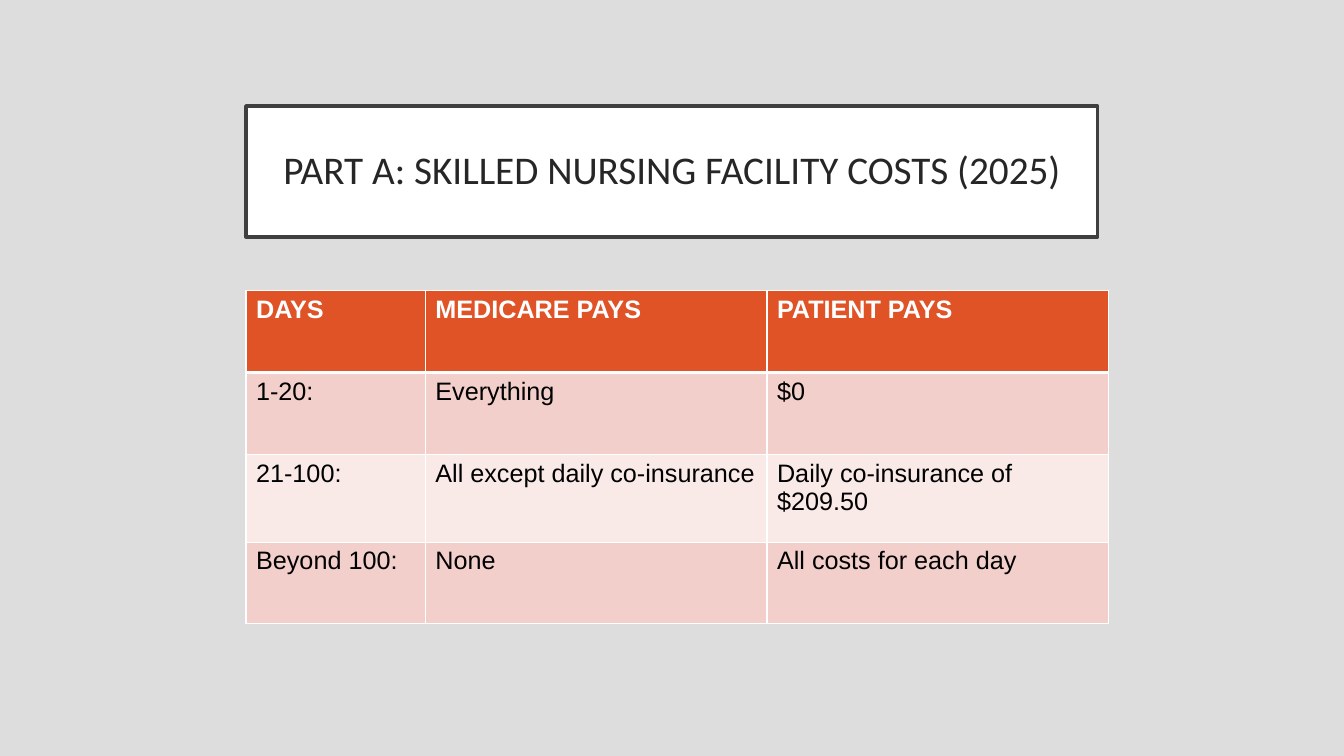
from lxml.etree import SubElement
from pptx import Presentation
from pptx.dml.color import RGBColor
from pptx.enum.text import MSO_ANCHOR, MSO_AUTO_SIZE, PP_ALIGN
from pptx.oxml.ns import qn
from pptx.util import Cm, Pt

TITLE = "PART A: SKILLED NURSING FACILITY COSTS (2025)"
COSTS = [
    ("DAYS", "MEDICARE PAYS", "PATIENT PAYS"),
    ("1-20:", "Everything", "$0"),
    ("21-100:", "All except daily co-insurance", "Daily co-insurance of $209.50"),
    ("Beyond 100:", "None", "All costs for each day"),
]
COLUMN_WIDTHS = [4.52, 8.61, 8.61]
ROW_HEIGHTS = [2.06, 2.06, 2.21, 2.06]
LEFT = 6.2

WHITE = RGBColor(0xFF, 0xFF, 0xFF)
BLACK = RGBColor(0x00, 0x00, 0x00)
GREY = RGBColor(0xDD, 0xDD, 0xDD)
FRAME = RGBColor(0x3F, 0x3F, 0x3F)
TITLE_INK = RGBColor(0x26, 0x26, 0x26)
ORANGE = RGBColor(0xDF, 0x53, 0x27)
BANDS = [RGBColor(0xF9, 0xE9, 0xE7), RGBColor(0xF3, 0xCF, 0xCB)]


def style_text(paragraph, font_name, size, color, bold=False):
    for span in paragraph.runs:
        span.font.name = font_name
        span.font.size = Pt(size)
        span.font.color.rgb = color
        span.font.bold = bold


def add_borders(cell, row):
    """Draw white cell borders, thicker between the header and the body."""
    widths = {"lnL": 1, "lnR": 1,
              "lnT": 3 if row == 1 else 1,
              "lnB": 3 if row == 0 else 1}
    properties = cell._tc.get_or_add_tcPr()
    for side, width in widths.items():
        line = SubElement(properties, qn(f"a:{side}"), w=str(Pt(width)))
        fill = SubElement(line, qn("a:solidFill"))
        SubElement(fill, qn("a:srgbClr"), val=str(WHITE))


def add_title(page):
    box = page.shapes.title
    box.left, box.top, box.width, box.height = Cm(LEFT), Cm(2.67), Cm(21.46), Cm(3.3)
    box.fill.solid()
    box.fill.fore_color.rgb = WHITE
    box.line.color.rgb = FRAME
    box.line.width = Pt(2.5)
    frame = box.text_frame
    frame.text = TITLE
    frame.word_wrap = True
    frame.auto_size = MSO_AUTO_SIZE.NONE
    frame.vertical_anchor = MSO_ANCHOR.MIDDLE
    frame.margin_left = frame.margin_right = Cm(0.5)
    frame.margin_top = frame.margin_bottom = Cm(0.5)
    para = frame.paragraphs[0]
    para.alignment = PP_ALIGN.CENTER
    para.line_spacing = 0.9
    style_text(para, "Calibri", 28, TITLE_INK)


def add_cost_table(page):
    table = page.shapes.add_table(
        len(COSTS), len(COLUMN_WIDTHS), Cm(LEFT), Cm(7.33),
        Cm(sum(COLUMN_WIDTHS)), Cm(sum(ROW_HEIGHTS))).table
    for column, width in zip(table.columns, COLUMN_WIDTHS):
        column.width = Cm(width)
    for table_row, height in zip(table.rows, ROW_HEIGHTS):
        table_row.height = Cm(height)
    for row, texts in enumerate(COSTS):
        header = row == 0
        for column, text in enumerate(texts):
            cell = table.cell(row, column)
            cell.text = text
            style_text(cell.text_frame.paragraphs[0], "Arial", 18,
                       WHITE if header else BLACK, header)
            add_borders(cell, row)
            cell.fill.solid()
            cell.fill.fore_color.rgb = ORANGE if header else BANDS[row % 2]


def main():
    deck = Presentation()
    deck.slide_width, deck.slide_height = Cm(33.87), Cm(19.05)
    page = deck.slides.add_slide(deck.slide_layouts.get_by_name("Title Only"))
    page.background.fill.solid()
    page.background.fill.fore_color.rgb = GREY
    add_title(page)
    add_cost_table(page)
    deck.save("out.pptx")


if __name__ == "__main__":
    main()
